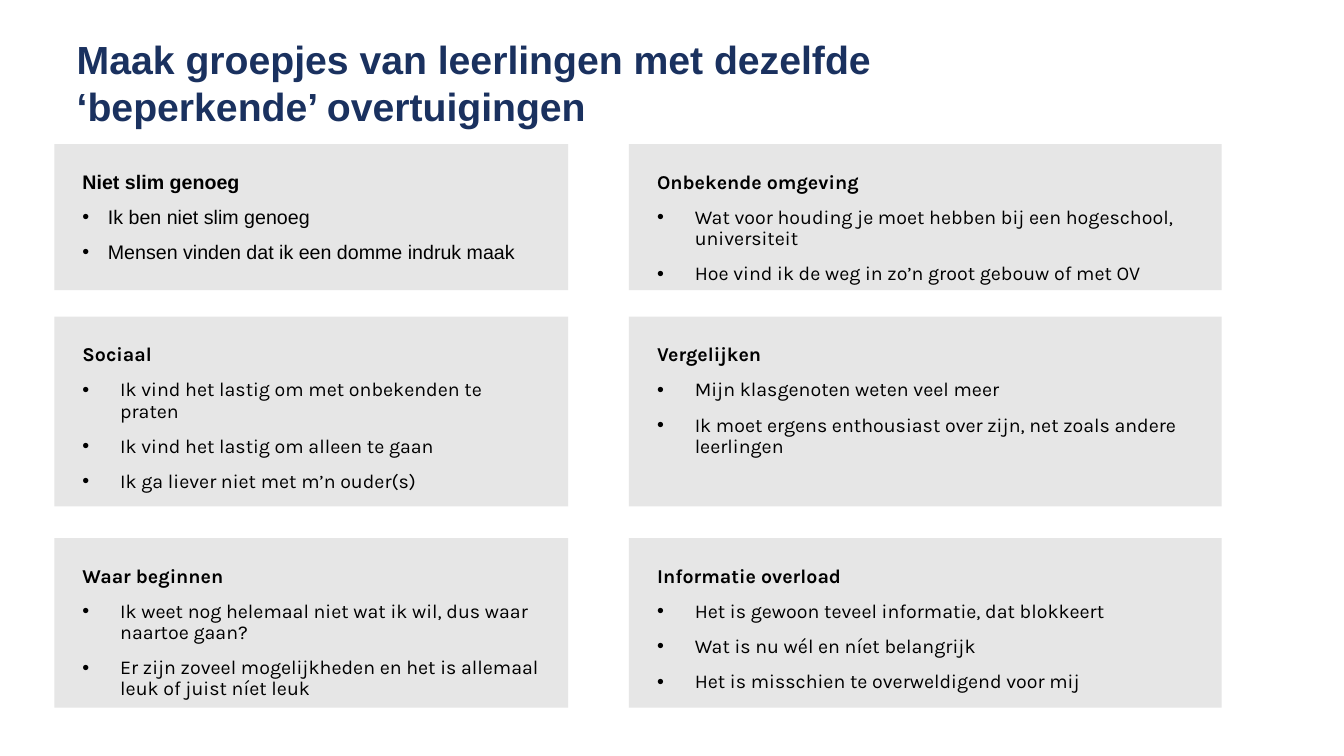
from lxml.etree import SubElement
from pptx import Presentation
from pptx.dml.color import RGBColor
from pptx.enum.shapes import MSO_SHAPE as Shape
from pptx.enum.text import MSO_ANCHOR as Anchor, MSO_AUTO_SIZE as AutoSize, PP_ALIGN as Align
from pptx.oxml.ns import qn
from pptx.util import Cm, Pt

NAVY = RGBColor(0x1A, 0x31, 0x5F)
GREY = RGBColor(0xE6, 0xE6, 0xE6)
BLACK = RGBColor(0, 0, 0)

# Grid in cm: (left, width) per column, (top, height) per row
COLUMNS = [(1.37, 12.95), (15.85, 14.94)]
ROWS = [(3.63, 3.68), (7.98, 4.78), (13.56, 4.27)]

# Beliefs per row, left card then right card: heading, bullet lines
BELIEFS = [
    [
        ("Niet slim genoeg", [
            "Ik ben niet slim genoeg",
            "Mensen vinden dat ik een domme indruk maak",
        ]),
        ("Onbekende omgeving", [
            "Wat voor houding je moet hebben bij een hogeschool, universiteit",
            "Hoe vind ik de weg in zo’n groot gebouw of met OV",
        ]),
    ],
    [
        ("Sociaal", [
            "Ik vind het lastig om met onbekenden te praten",
            "Ik vind het lastig om alleen te gaan",
            "Ik ga liever niet met m’n ouder(s)",
        ]),
        ("Vergelijken", [
            "Mijn klasgenoten weten veel meer",
            "Ik moet ergens enthousiast over zijn, net zoals andere leerlingen",
        ]),
    ],
    [
        ("Waar beginnen", [
            "Ik weet nog helemaal niet wat ik wil, dus waar naartoe gaan?",
            "Er zijn zoveel mogelijkheden en het is allemaal leuk of juist níet leuk",
        ]),
        ("Informatie overload", [
            "Het is gewoon teveel informatie, dat blokkeert",
            "Wat is nu wél en níet belangrijk",
            "Het is misschien te overweldigend voor mij",
        ]),
    ],
]


class SlideBuilder:
    """Holds the style and the current slide."""

    title_font, title_size = "Arial", Pt(28)
    body_size = Pt(14)
    inset, bottom_inset = Cm(0.71), Cm(0.99)

    def __init__(self, presentation):
        self.slide = presentation.slides.add_slide(presentation.slide_layouts[5])

    def style(self, paragraph, font, size, color, bold):
        paragraph.alignment = Align.LEFT
        for run in paragraph.runs:
            run.font.name, run.font.size, run.font.bold = font, size, bold
            run.font.color.rgb = color

    def title(self, text, left, top, width, height):
        shape = self.slide.shapes.title
        shape.left, shape.top, shape.width, shape.height = left, top, width, height
        frame = shape.text_frame
        frame.text = text
        frame.word_wrap = True
        frame.auto_size = AutoSize.NONE
        frame.vertical_anchor = Anchor.TOP
        self.style(frame.paragraphs[0], self.title_font, self.title_size, NAVY, True)

    def bullet(self, paragraph, indent):
        properties = paragraph._p.get_or_add_pPr()
        properties.set("marL", str(indent))
        properties.set("indent", str(-indent))
        SubElement(properties, qn("a:buFont"), typeface="Arial")
        SubElement(properties, qn("a:buChar"), char="•")

    def card(self, heading, lines, left, top, width, height, font="Karla", indent=Cm(0.95)):
        shape = self.slide.shapes.add_shape(Shape.RECTANGLE, left, top, width, height)
        shape.shadow.inherit = False
        shape.fill.solid()
        shape.fill.fore_color.rgb = GREY
        shape.line.fill.background()
        frame = shape.text_frame
        frame.word_wrap = True
        frame.vertical_anchor = Anchor.TOP
        frame.margin_left = frame.margin_top = frame.margin_right = self.inset
        frame.margin_bottom = self.bottom_inset
        frame.text = "\n".join([heading, *lines])
        for index, paragraph in enumerate(frame.paragraphs):
            if index:
                self.bullet(paragraph, indent)
                paragraph.space_before = Pt(10)
            paragraph.line_spacing = 0.9
            self.style(paragraph, font, self.body_size, BLACK, index == 0)


def main():
    presentation = Presentation()
    presentation.slide_width, presentation.slide_height = Cm(33.87), Cm(19.05)
    builder = SlideBuilder(presentation)

    # Title
    builder.title("Maak groepjes van leerlingen met dezelfde ‘beperkende’ overtuigingen",
                  Cm(1.68), Cm(0.76), Cm(25.32), Cm(2.64))

    # Cards; the first one has its own font and a tighter indent
    first_card = {"font": "Arial", "indent": Cm(0.64)}
    for row, (top, height) in enumerate(ROWS):
        for column, (left, width) in enumerate(COLUMNS):
            heading, lines = BELIEFS[row][column]
            options = first_card if row == column == 0 else {}
            builder.card(heading, lines, Cm(left), Cm(top), Cm(width), Cm(height), **options)

    presentation.save("out.pptx")


if __name__ == "__main__":
    main()
